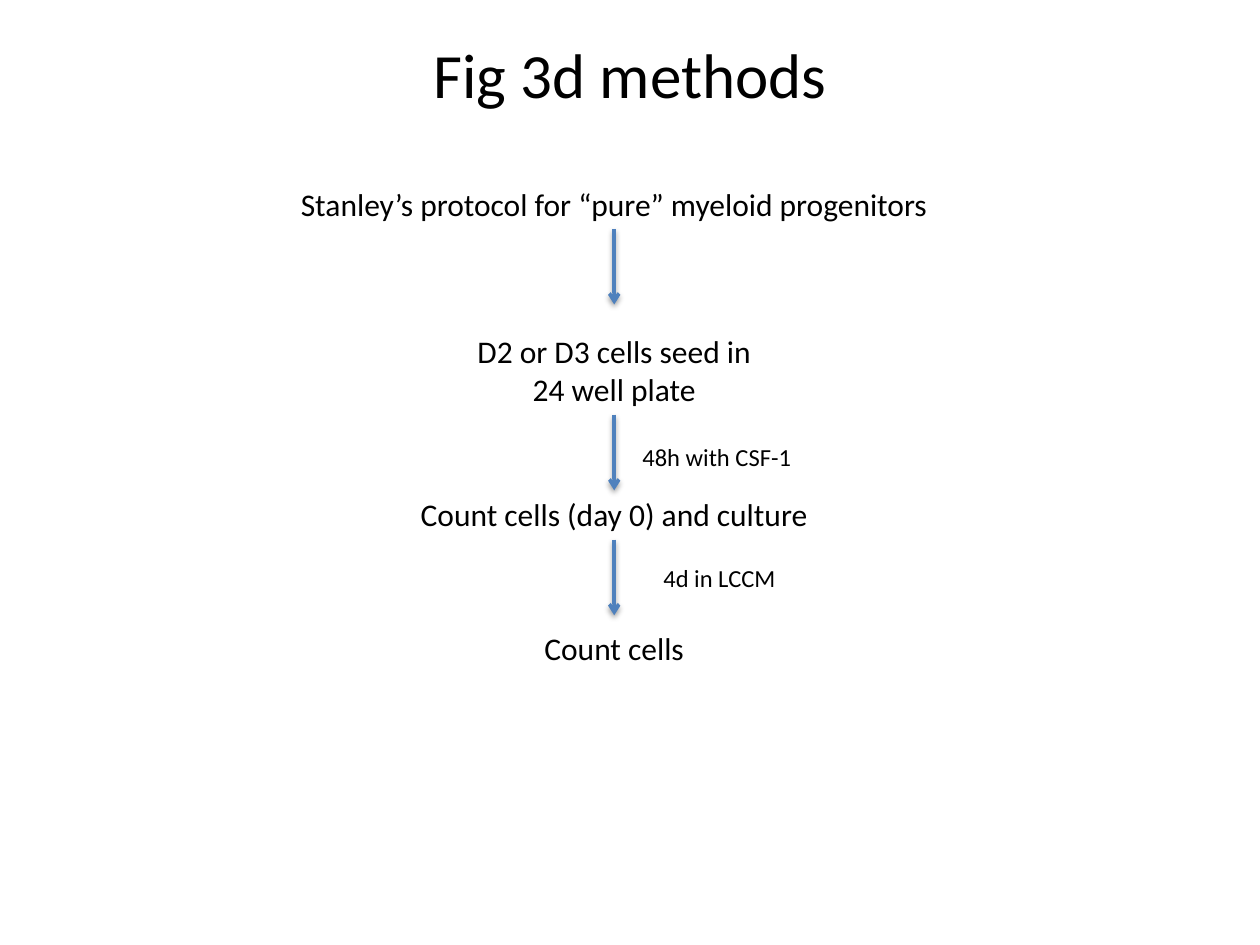
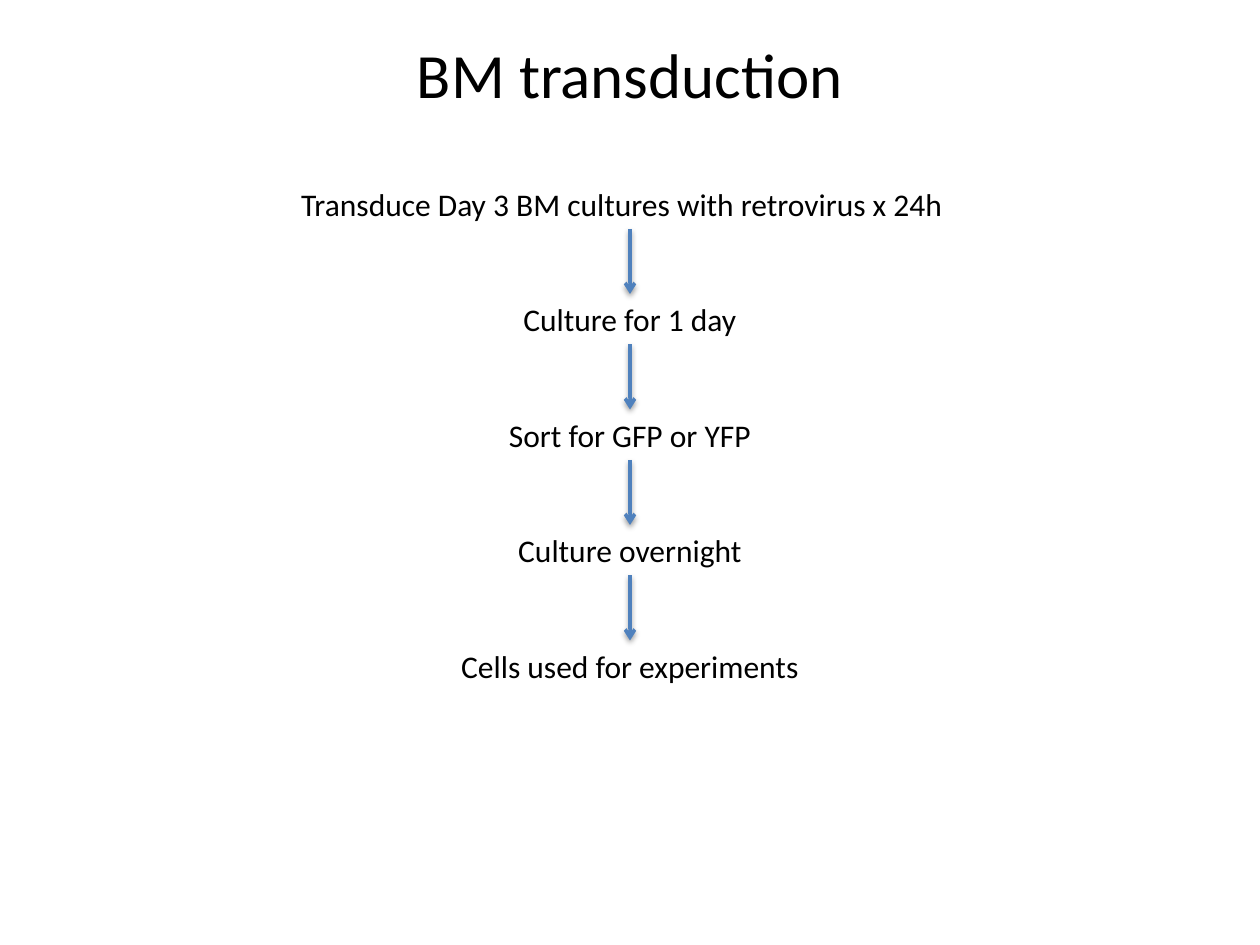
from lxml import etree
from pptx import Presentation
from pptx import util as u
from pptx.dml.color import RGBColor
from pptx.enum import shapes, text
from pptx.oxml.ns import qn

# Shared look
PX = 7620  # EMU per px, 120 px to the inch
FONT, INK, ARROW = "Calibri", "000000", "4F81BD"
TITLE_BOX = (90, 20, 1020, 100)
FIRST_TOP, LINE_HEIGHT = 170, 48

# Steps: text, top, width, height; notes: text, left, top
METHODS = {
    "title": "Fig 3d methods",
    "axis": 585,
    "arrow": 72,
    "steps": [
        ("Stanley’s protocol for “pure” myeloid progenitors", FIRST_TOP, 830, LINE_HEIGHT),
        ("D2 or D3 cells seed in 24 well plate", 310, 310, 85),
        ("Count cells (day 0) and culture", 466, 430, LINE_HEIGHT),
        ("Count cells", 593, 350, LINE_HEIGHT),
    ],
    "notes": [("48h with CSF-1", 600, 415), ("4d in LCCM", 620, 530)],
    "format": {},
    "first_align": "CENTER",
}
STAGES = [
    "Transduce Day 3 BM cultures with retrovirus x 24h",
    "Culture for 1 day",
    "Sort for GFP or YFP",
    "Culture overnight",
    "Cells used for experiments",
]
STAGE_PITCH = 110
TRANSDUCTION = {
    "title": "BM transduction",
    "axis": 600,
    "arrow": STAGE_PITCH - LINE_HEIGHT,
    "steps": [(stage, FIRST_TOP + i * STAGE_PITCH, 650, LINE_HEIGHT)
              for i, stage in enumerate(STAGES)],
    "notes": [],
    "format": {"after": 6},
    "first_align": "LEFT",
}


def px(length):
    return u.Emu(length * PX)


def color(value):
    return RGBColor.from_string(value)


def add_text(slide, words, box, size=18, align="CENTER", anchor="TOP", after=0):
    frame = slide.shapes.add_textbox(*map(px, box)).text_frame
    frame.word_wrap = True
    frame.vertical_anchor = getattr(text.MSO_ANCHOR, anchor)
    paragraph = frame.paragraphs[0]
    paragraph.alignment = getattr(text.PP_ALIGN, align)
    paragraph.space_after = u.Pt(after)
    run = paragraph.add_run()
    run.text = words
    run.font.name, run.font.size = FONT, u.Pt(size)
    run.font.color.rgb = color(INK)


def add_arrow(slide, x, top, length):
    arrow = slide.shapes.add_connector(
        shapes.MSO_CONNECTOR.STRAIGHT, px(x), px(top), px(x), px(top + length))
    arrow.line.color.rgb = color(ARROW)
    arrow.line.width = u.Pt(2)
    properties = arrow.line._get_or_add_ln()
    etree.SubElement(properties, qn("a:tailEnd"), type="arrow")
    # Soft shadow straight below
    effects = etree.SubElement(properties.getparent(), qn("a:effectLst"))
    shadow = etree.SubElement(effects, qn("a:outerShdw"), blurRad="40000",
                              dist="20000", dir="5400000", rotWithShape="0")
    tint = etree.SubElement(shadow, qn("a:srgbClr"), val=INK)
    etree.SubElement(tint, qn("a:alpha"), val="38000")


def add_flow(deck, flow):
    slide = deck.slides.add_slide(deck.slide_layouts[6])
    add_text(slide, flow["title"], TITLE_BOX, size=36, anchor="MIDDLE")
    last = len(flow["steps"]) - 1
    for i, (step, top, width, height) in enumerate(flow["steps"]):
        add_text(slide, step, (flow["axis"] - width // 2, top, width, height),
                 align="CENTER" if i else flow["first_align"], **flow["format"])
        if i < last:
            add_arrow(slide, flow["axis"], top + height, flow["arrow"])
    for note, left, top in flow["notes"]:
        add_text(slide, note, (left, top, 250, 40), size=14, align="LEFT")


def main():
    deck = Presentation()
    deck.slide_width, deck.slide_height = px(1200), px(900)
    for flow in (METHODS, TRANSDUCTION):
        add_flow(deck, flow)
    deck.save("out.pptx")


if __name__ == "__main__":
    main()
